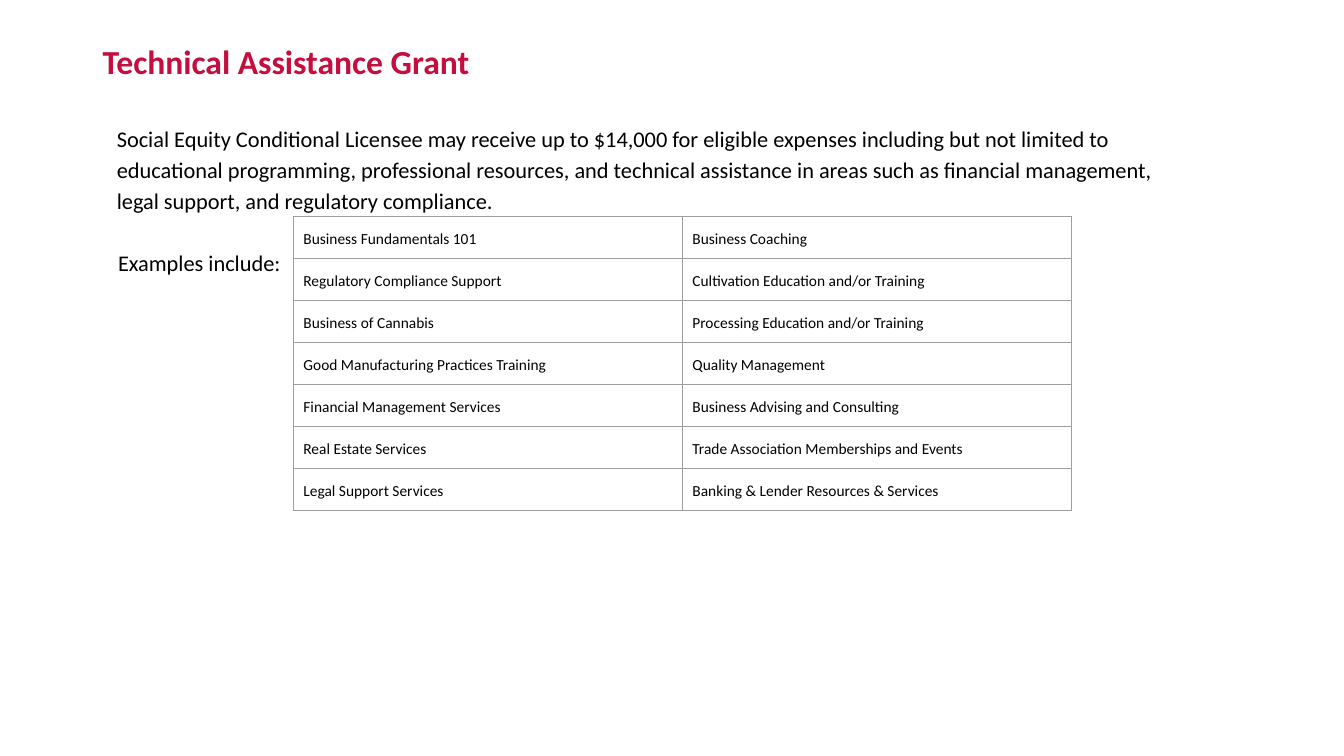
from pptx import Presentation
from pptx.dml.color import RGBColor
from pptx.enum.text import MSO_ANCHOR
from pptx.oxml.ns import qn
from pptx.util import Pt
from lxml.etree import SubElement

# Content
TITLE = "Technical Assistance Grant"
SUMMARY = (
    "Social Equity Conditional Licensee may receive up to $14,000 for eligible "
    "expenses including but not limited to educational programming, professional "
    "resources, and technical assistance in areas such as financial management, "
    "legal support, and regulatory compliance."
)
EXAMPLES_LABEL = "Examples include:"
EXAMPLES = [
    ("Business Fundamentals 101", "Business Coaching"),
    ("Regulatory Compliance Support", "Cultivation Education and/or Training"),
    ("Business of Cannabis", "Processing Education and/or Training"),
    ("Good Manufacturing Practices Training", "Quality Management"),
    ("Financial Management Services", "Business Advising and Consulting"),
    ("Real Estate Services", "Trade Association Memberships and Events"),
    ("Legal Support Services", "Banking & Lender Resources & Services"),
]

THEME = {
    "font": "Calibri",
    "title_size": 24, "body_size": 16, "cell_size": 11,
    "title_color": "C40E3E", "text_color": "000000", "border_color": "9E9E9E",
    "line_spacing": 1.15, "border_width": 0.75,
}

# Layout, in points
SLIDE_SIZE = (960, 540)
TITLE_BOX = (66.24, 28.8, 828, 61.2)
BODY_BOX = (66.24, 82.8, 771.12, 275)
BODY_INDENTS = (10.08, 11)
EXAMPLES_GAP = 22.4
TABLE_LEFT, TABLE_TOP = 209.5, 154.6
COLUMN_WIDTH, ROW_HEIGHT = 277.9, 30
CELL_INSET = 7.2


def style(paragraph, size, color, spacing=THEME["line_spacing"], bold=False):
    paragraph.line_spacing = spacing
    for run in paragraph.runs:
        run.font.name = THEME["font"]
        run.font.size = Pt(size)
        run.font.bold = bold
        run.font.color.rgb = RGBColor.from_string(color)


def add_text(slide, box, text):
    frame = slide.shapes.add_textbox(*map(Pt, box)).text_frame
    frame.word_wrap = True
    frame.vertical_anchor = MSO_ANCHOR.TOP
    frame.text = text
    return frame


def add_borders(cell):
    properties = cell._tc.get_or_add_tcPr()
    for position, side in enumerate(("a:lnL", "a:lnR", "a:lnT", "a:lnB")):
        line = SubElement(properties, qn(side), w=str(Pt(THEME["border_width"])))
        fill = SubElement(line, qn("a:solidFill"))
        SubElement(fill, qn("a:srgbClr"), val=THEME["border_color"])
        properties.remove(line)
        properties.insert(position, line)


def add_examples(slide):
    rows, columns = len(EXAMPLES), len(EXAMPLES[0])
    examples = slide.shapes.add_table(
        rows, columns, Pt(TABLE_LEFT), Pt(TABLE_TOP),
        Pt(columns * COLUMN_WIDTH), Pt(rows * ROW_HEIGHT),
    ).table
    examples.first_row = examples.horz_banding = False
    for row, services in zip(examples.rows, EXAMPLES):
        row.height = Pt(ROW_HEIGHT)
        for cell, service in zip(row.cells, services):
            cell.text = service
            cell.fill.background()
            cell.margin_left = cell.margin_right = Pt(CELL_INSET)
            cell.margin_top = cell.margin_bottom = Pt(CELL_INSET)
            style(cell.text_frame.paragraphs[0], THEME["cell_size"], THEME["text_color"])
            add_borders(cell)


def main():
    deck = Presentation()
    deck.slide_width, deck.slide_height = map(Pt, SLIDE_SIZE)
    slide = deck.slides.add_slide(deck.slide_layouts[6])

    # Title
    title = add_text(slide, TITLE_BOX, TITLE)
    style(title.paragraphs[0], THEME["title_size"], THEME["title_color"], 0.9, True)

    # Summary and the label beside the table
    body = add_text(slide, BODY_BOX, f"{SUMMARY}\n{EXAMPLES_LABEL}")
    for paragraph, indent in zip(body.paragraphs, BODY_INDENTS):
        paragraph._p.get_or_add_pPr().set("marL", str(Pt(indent)))
        style(paragraph, THEME["body_size"], THEME["text_color"])
    body.paragraphs[1].space_before = Pt(EXAMPLES_GAP)

    # Table of eligible services
    add_examples(slide)

    deck.save("out.pptx")


if __name__ == "__main__":
    main()
